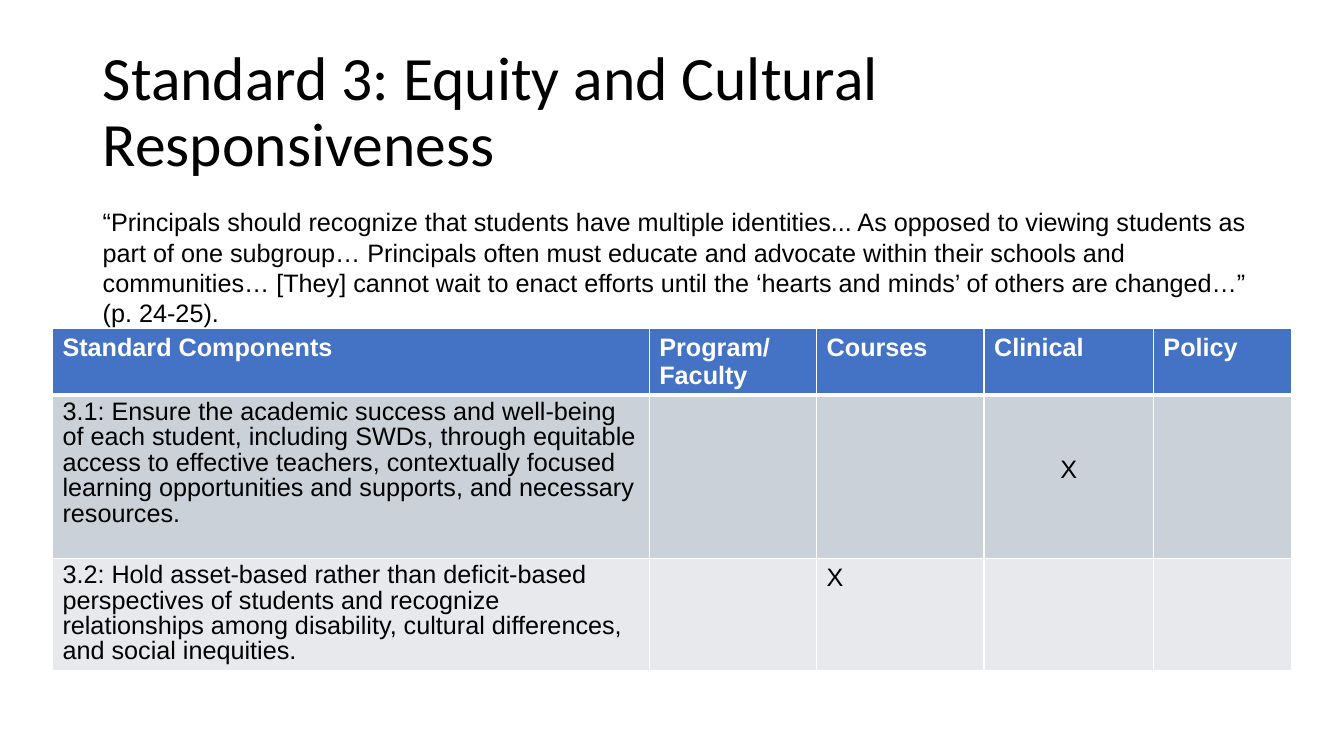
from dataclasses import dataclass

from lxml.etree import SubElement
from pptx import Presentation
from pptx.dml.color import RGBColor
from pptx.enum.text import MSO_ANCHOR, MSO_AUTO_SIZE, PP_ALIGN
from pptx.oxml.ns import qn
from pptx.util import Inches, Pt


@dataclass(frozen=True)
class Theme:
    ink: str = "000000"
    white: str = "FFFFFF"
    header: str = "4472C4"
    bands: tuple = ("CAD1D8", "E7E9EC")
    title_font: str = "Calibri"
    body_font: str = "Arial"
    title_size: int = 44
    body_size: int = 18


THEME = Theme()

TITLE = "Standard 3: Equity and Cultural Responsiveness"
QUOTE = (
    "“Principals should recognize that students have multiple identities... "
    "As opposed to viewing students as part of one subgroup… Principals often must "
    "educate and advocate within their schools and communities… [They] cannot wait to "
    "enact efforts until the ‘hearts and minds’ of others are changed…” (p. 24-25)."
)
COLUMN_WIDTHS = (5.92, 1.66, 1.66, 1.68, 1.37)
ROW_HEIGHTS = (0.65, 1.62, 1.11)
ROWS = (
    ("Standard Components", "Program/ Faculty", "Courses", "Clinical", "Policy"),
    ("3.1: Ensure the academic success and well-being of each student, including SWDs, "
     "through equitable access to effective teachers, contextually focused learning "
     "opportunities and supports, and necessary resources.", "", "", "X", ""),
    ("3.2: Hold asset-based rather than deficit-based perspectives of students and "
     "recognize relationships among disability, cultural differences, and social "
     "inequities.", "", "X", "", ""),
)


def write_text(tf, text, font=THEME.body_font, size=THEME.body_size, color=THEME.ink,
               bold=False, align=PP_ALIGN.LEFT, spacing=1.0):
    tf.word_wrap = True
    p = tf.paragraphs[0]
    p.alignment = align
    p.line_spacing = spacing
    r = p.add_run()
    r.text = text
    r.font.name = font
    r.font.size = Pt(size)
    r.font.bold = bold
    r.font.color.rgb = RGBColor.from_string(color)


def style_cell(cell, fill, bottom_width):
    # Borders come before the fill in the cell properties
    tc_pr = cell._tc.get_or_add_tcPr()
    for side, width in (("L", 1), ("R", 1), ("T", 1), ("B", bottom_width)):
        ln = SubElement(tc_pr, qn(f"a:ln{side}"), w=str(Pt(width)))
        SubElement(SubElement(ln, qn("a:solidFill")), qn("a:srgbClr"), val=THEME.white)
    cell.fill.solid()
    cell.fill.fore_color.rgb = RGBColor.from_string(fill)


def add_title(s, left, top, width, height):
    sp = s.shapes.title
    sp.left, sp.top, sp.width, sp.height = map(Inches, (left, top, width, height))
    tf = sp.text_frame
    tf.auto_size = MSO_AUTO_SIZE.NONE
    tf.vertical_anchor = MSO_ANCHOR.MIDDLE
    write_text(tf, TITLE, font=THEME.title_font, size=THEME.title_size, spacing=0.9)


def add_quote(s, left, top, width, height):
    sp = s.shapes.add_textbox(*map(Inches, (left, top, width, height)))
    write_text(sp.text_frame, QUOTE)


def add_standards_table(s, left, top):
    box = map(Inches, (left, top, sum(COLUMN_WIDTHS), sum(ROW_HEIGHTS)))
    table = s.shapes.add_table(len(ROWS), len(COLUMN_WIDTHS), *box).table
    for column, width in zip(table.columns, COLUMN_WIDTHS):
        column.width = Inches(width)
    for i, (texts, height) in enumerate(zip(ROWS, ROW_HEIGHTS)):
        table.rows[i].height = Inches(height)
        is_header = i == 0
        fill = THEME.header if is_header else THEME.bands[i - 1]
        for j, text in enumerate(texts):
            cell = table.cell(i, j)
            style_cell(cell, fill, bottom_width=3 if is_header else 1)
            if not text:
                continue
            # The mark for 3.1 sits in the middle of its cell
            centred = (i, j) == (1, 3)
            if centred:
                cell.margin_top = Inches(0.6)
            write_text(cell.text_frame, text, bold=is_header,
                       color=THEME.white if is_header else THEME.ink,
                       align=PP_ALIGN.CENTER if centred else PP_ALIGN.LEFT,
                       spacing=0.9 if j == 0 and not is_header else 1.0)


def main():
    prs = Presentation()
    prs.slide_width, prs.slide_height = Inches(13.33), Inches(7.5)
    s = prs.slides.add_slide(prs.slide_layouts[5])
    add_title(s, 0.92, 0.4, 11.5, 1.45)
    add_standards_table(s, 0.52, 3.26)
    add_quote(s, 0.92, 2, 11.89, 1.31)
    prs.save("out.pptx")


if __name__ == "__main__":
    main()
